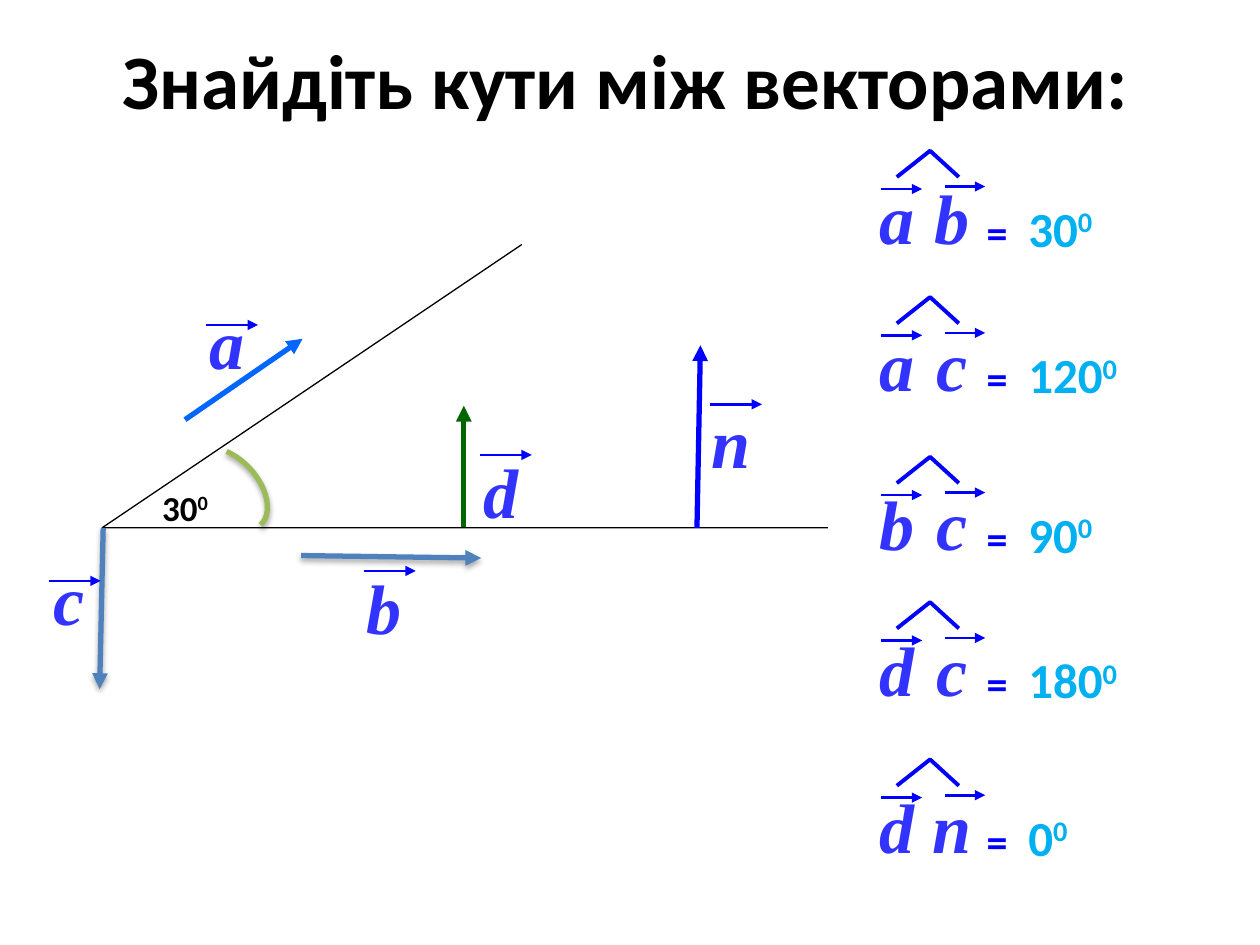
from pptx import Presentation
from pptx import util as u
from pptx.dml.color import RGBColor
from pptx.enum import shapes, text
from pptx.oxml import parse_xml
from pptx.oxml.ns import nsdecls

BLACK = RGBColor(0x00, 0x00, 0x00)
BLUE = RGBColor(0x00, 0x00, 0xFF)
SKY = RGBColor(0x00, 0x66, 0xFF)
STEEL = RGBColor(0x4F, 0x81, 0xBD)
GREEN = RGBColor(0x00, 0x66, 0x00)
OLIVE = RGBColor(0x9B, 0xBB, 0x59)
INDIGO = RGBColor(0x33, 0x33, 0xFF)
CYAN = RGBColor(0x00, 0xB0, 0xF0)

LETTER = {"size": u.Pt(40), "name": "Times New Roman", "bold": True, "italic": True}
HEADING = {"size": u.Pt(44), "name": "Calibri", "bold": True}
ANGLE = {"size": u.Pt(20), "name": "Calibri", "bold": True}
EQUALS = {"size": u.Pt(24), "name": "Calibri", "bold": True}
ANSWER = {"size": u.Pt(28), "name": "Calibri", "bold": True}

SHADOW = (
    f'<a:effectLst {nsdecls("a")}><a:outerShdw blurRad="40000" dist="23000" dir="5400000" '
    'rotWithShape="0"><a:srgbClr val="000000"><a:alpha val="35000"/></a:srgbClr>'
    "</a:outerShdw></a:effectLst>"
)
NO_SHADOW = f'<a:effectLst {nsdecls("a")}/>'
ARROWHEAD = f'<a:tailEnd {nsdecls("a")} type="triangle"/>'


def add_label(parent, words, place, style, color, power="", wrap=False, margins=None):
    frame = parent.add_textbox(*(u.Cm(v) for v in place)).text_frame
    settings = {"word_wrap": wrap, **(margins or {})}
    for key, value in settings.items():
        setattr(frame, key, value)
    line = frame.paragraphs[0]
    if wrap:
        line.alignment = text.PP_ALIGN.CENTER
    for part, raised in ((words, False), (power, True)):
        if part:
            run = line.add_run()
            run.text = part
            for key, value in style.items():
                setattr(run.font, key, value)
            run.font.color.rgb = color
            if raised:
                run.font._element.set("baseline", "30000")


def add_arrow(parent, ends, color, width, effect=NO_SHADOW):
    arrow = parent.add_connector(shapes.MSO_CONNECTOR.STRAIGHT, *(u.Cm(v) for v in ends))
    arrow.line.color.rgb = color
    arrow.line.width = u.Pt(width)
    arrow._element.spPr.get_or_add_ln().append(parse_xml(ARROWHEAD))
    arrow._element.spPr.append(parse_xml(effect))


deck = Presentation()
deck.slide_width, deck.slide_height = u.Cm(25.4), u.Cm(19.05)
slide = deck.slides.add_slide(deck.slide_layouts[5])
canvas = slide.shapes

heading = canvas.title
heading_place = {"left": 1.19, "top": 0, "width": 22.86, "height": 3.17}
for key, value in heading_place.items():
    setattr(heading, key, u.Cm(value))
heading.text_frame.text = "Знайдіть кути між векторами:"
heading.text_frame.vertical_anchor = text.MSO_ANCHOR.MIDDLE
heading_line = heading.text_frame.paragraphs[0]
heading_line.alignment = text.PP_ALIGN.CENTER
for key, value in HEADING.items():
    setattr(heading_line.font, key, value)
heading_line.font.color.rgb = BLACK

pairs = [
    ("a", "b", "30", 3.4),
    ("a", "c", "120", 6.35),
    ("b", "c", "90", 9.57),
    ("d", "c", "180", 12.5),
    ("d", "n", "0", 15.67),
]
row_groups = [canvas.add_group_shape().shapes for pair in pairs]

outlines = [(canvas, [(16.69, 10.64), (2.06, 10.64), (10.52, 4.93)], BLACK, 0.75)]
for row, (first, second, degrees, top) in zip(row_groups, pairs):
    hat = [(18.08, top + 0.17), (18.75, top - 0.36), (19.33, top + 0.17)]
    outlines.append((row, hat, BLUE, 2.25))

for parent, points, color, width in outlines:
    corners = [(u.Cm(x), u.Cm(y)) for x, y in points]
    builder = parent.build_freeform(*corners[0])
    builder.add_line_segments(corners[1:], close=False)
    outline = builder.convert_to_shape()
    outline.fill.background()
    outline.line.color.rgb = color
    outline.line.width = u.Pt(width)
    outline.shadow.inherit = False

vectors = [
    ((9.35, 10.62, 9.35, 8.18), GREEN, NO_SHADOW),
    ((14.05, 10.64, 14.12, 6.96), BLUE, NO_SHADOW),
    ((6.07, 11.2, 9.7, 11.25), STEEL, SHADOW),
    ((2.08, 10.64, 2.01, 13.89), STEEL, SHADOW),
    ((3.73, 8.46, 6.1, 6.83), SKY, NO_SHADOW),
]
for ends, color, effect in vectors:
    add_arrow(canvas, ends, color, 3, effect)

vector_names = [
    ("b", 6.91, 11.25, 11.51),
    ("c", 0.56, 11.07, 11.71),
    ("a", 3.73, 5.92, 6.55),
    ("d", 9.25, 8.92, 9.17),
    ("n", 13.89, 7.9, 8.15),
]
for letter, left, top, bar in vector_names:
    named = canvas.add_group_shape().shapes
    add_label(named, letter, (left, top, 1.68, 1.96), LETTER, INDIGO, wrap=True)
    add_arrow(named, (left + 0.43, bar, left + 1.47, bar), BLUE, 1.5)

add_label(canvas, "30", (3.02, 9.68, 1.52, 1.12), ANGLE, BLACK, power="0")

arc_place = (3.61, 9.25, 1.96, 1.22)
arc = canvas.add_shape(shapes.MSO_SHAPE.ARC, *(u.Cm(v) for v in arc_place))
arc.rotation = 47.4
arc.adjustments[0], arc.adjustments[1] = 132.53, 0
arc.fill.background()
arc.line.color.rgb = OLIVE
arc.line.width = u.Pt(3)
arc._element.spPr.append(parse_xml(SHADOW))

flush = {f"margin_{side}": 0 for side in ("left", "top", "right", "bottom")}
for row, (first, second, degrees, top) in zip(row_groups, pairs):
    add_label(row, first, (17.25, top, 1.68, 1.96), LETTER, INDIGO, wrap=True)
    add_arrow(row, (17.75, top + 0.41, 18.59, top + 0.41), BLUE, 1.5)
    add_label(row, second + " ", (18.52, top, 1.68, 1.96), LETTER, INDIGO, wrap=True)
    add_arrow(row, (19.05, top + 0.36, 19.86, top + 0.36), BLUE, 1.5)
    add_label(row, "=", (19.64, top + 0.64, 0.99, 1.27), EQUALS, BLUE)
    answer_place = (20.73, top + 0.6, 0.56 + 0.51 * len(degrees), 1.19)
    add_label(canvas, degrees, answer_place, ANSWER, CYAN, power="0", margins=flush)

deck.save("out.pptx")
